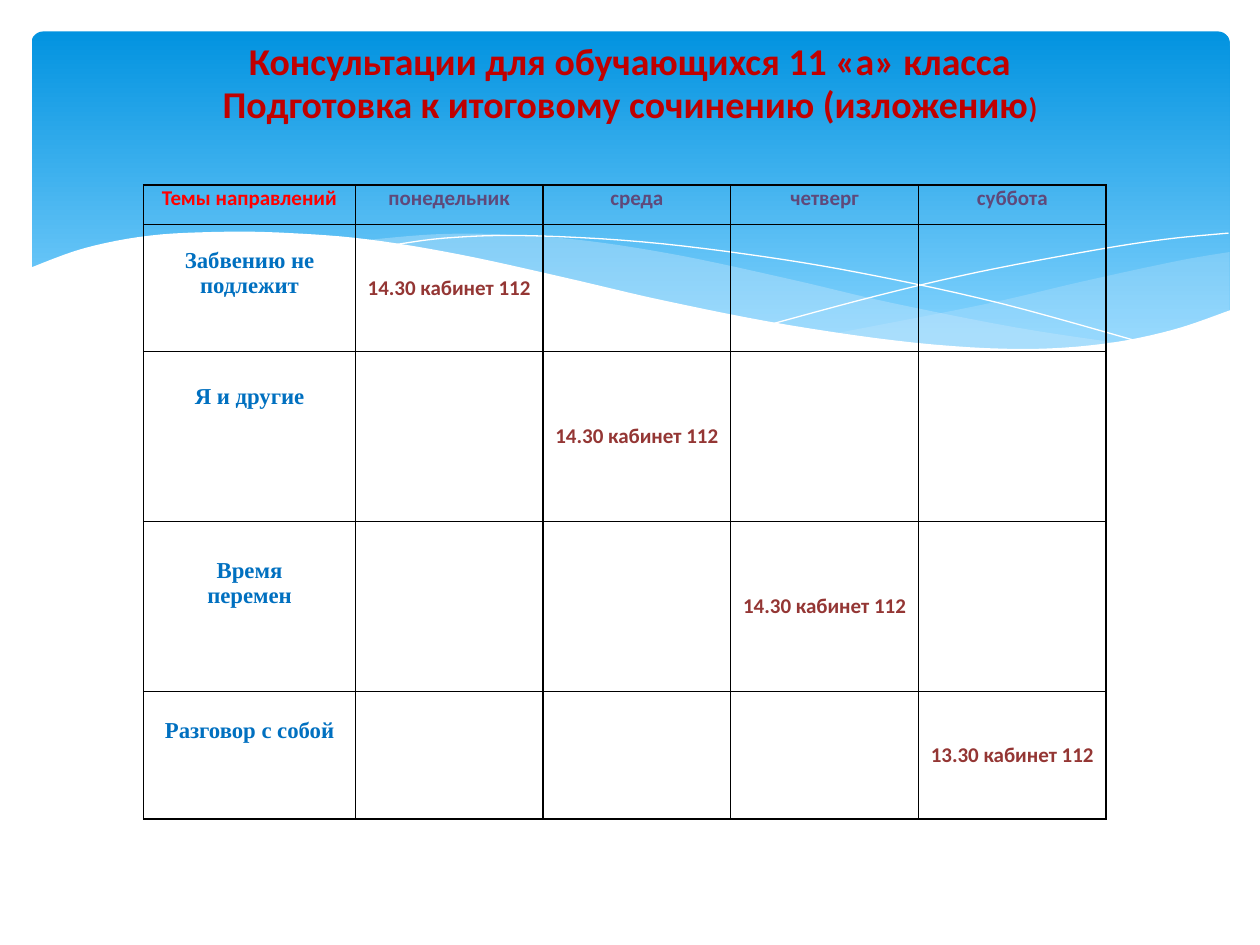
from lxml import etree
from pptx import Presentation
from pptx.dml.color import RGBColor
from pptx.enum import shapes, text
from pptx.oxml import ns
from pptx.util import Inches, Pt

COLORS = {
    "sky_top": "0293E0", "sky_bottom": "83D3FE", "mist": "C6E7FC",
    "white": "FFFFFF", "border": "000000", "title": "C00000",
    "corner": "FF0000", "day": "5F497A", "theme": "0070C0", "slot": "943634",
}

TITLE_FONT = {"name": "Calibri", "size": Pt(21.6), "bold": True}
CELL_FONT = {"name": "Calibri", "size": Pt(12), "bold": True}
THEME_FONT = {"name": "Times New Roman", "size": Pt(13), "bold": True}

DAYS = ["понедельник", "среда", "четверг", "суббота"]
CONSULTATIONS = [
    ("Забвению не подлежит", 0.19, "14.30 кабинет 112"),
    ("Я и другие", 0.26, "14.30 кабинет 112"),
    ("Время\nперемен", 0.29, "14.30 кабинет 112"),
    ("Разговор с собой", 0.21, "13.30 кабинет 112"),
]
COLUMN_WIDTHS = [1.68] + [1.49] * len(DAYS)
ROW_HEIGHTS = [0.31, 1.01, 1.35, 1.35, 1.01]

RIGHT_MIST = [
    [(9.76, 2), (9.35, 2.07), (8.61, 2.23), (7.79, 2.42), (6.61, 2.65)],
    [(6.61, 2.65), (7.05, 2.71), (7.57, 2.76), (8.14, 2.78), (8.63, 2.75),
     (9.13, 2.67), (9.49, 2.57), (9.76, 2.47)],
]
CENTRE_MIST = [
    [(8.93, 2.73), (8.07, 2.6), (7.06, 2.4), (6.29, 2.22), (5.41, 2.03),
     (4.65, 1.91), (3.99, 1.86), (3.44, 1.86), (2.86, 1.91)],
    [(2.86, 1.91), (3.62, 2.03), (4.49, 2.22), (5.66, 2.48), (6.5, 2.64),
     (7.22, 2.74), (7.85, 2.78), (8.38, 2.78), (8.93, 2.73)],
]
FALLING_LINE = [[(3.09, 1.95), (3.53, 1.89), (4.16, 1.87), (5.1, 1.92),
                 (6.08, 2.04), (6.95, 2.19), (7.95, 2.41), (9.07, 2.72)]]
RISING_LINE = [[(6.13, 2.57), (6.95, 2.35), (7.76, 2.16), (8.66, 1.99),
                (9.24, 1.9), (9.75, 1.85)]]
WHITE_WAVE = [
    [(9.77, 2.46), (9.3, 2.62), (8.75, 2.73), (8.09, 2.77), (7.26, 2.72),
     (6.26, 2.58), (5.29, 2.39), (4.47, 2.2), (3.65, 2.02), (2.92, 1.9),
     (2.3, 1.85), (1.77, 1.84), (1.19, 1.87), (0.67, 1.97), (0.23, 2.13)],
    [(0.23, 3.29), (9.77, 3.29)],
]


def rgb(color):
    return RGBColor.from_string(COLORS[color])


def apply_format(target, values):
    for attribute, value in values.items():
        setattr(target, attribute, value)


def style_font(font, values, color):
    apply_format(font, values)
    font.color.rgb = rgb(color)


def smooth(knots, steps=6):
    padded = [knots[0], *knots, knots[-1]]
    points = []
    for a, b, c, d in zip(padded, padded[1:], padded[2:], padded[3:]):
        for step in range(steps):
            t = step / steps
            points.append(tuple(
                (2 * q + (r - p) * t + (2 * p - 5 * q + 4 * r - s) * t ** 2
                 + (3 * q - p - 3 * r + s) * t ** 3) / 2
                for p, q, r, s in zip(a, b, c, d)))
    return points + [knots[-1]]


def add_outline(slide, curves, closed):
    points = [(Inches(x), Inches(y)) for curve in curves for x, y in smooth(curve)]
    builder = slide.shapes.build_freeform(*points[0])
    builder.add_line_segments(points[1:], close=closed)
    outline = builder.convert_to_shape()
    outline.shadow.inherit = False
    return outline


def add_wave(slide, curves, color, opacity=100):
    wave = add_outline(slide, curves, True)
    wave.fill.solid()
    wave.fill.fore_color.rgb = rgb(color)
    wave.line.fill.background()
    tint = wave.fill._xPr.find(".//" + ns.qn("a:srgbClr"))
    etree.SubElement(tint, ns.qn("a:alpha"), val=str(opacity * 1000))


def add_hairline(slide, curves):
    hairline = add_outline(slide, curves, False)
    hairline.fill.background()
    hairline.line.color.rgb = rgb("white")
    hairline.line.width = Pt(0)


def add_sky(slide):
    sky = slide.shapes.add_shape(
        shapes.MSO_SHAPE.ROUNDED_RECTANGLE,
        Inches(0.25), Inches(0.25), Inches(9.51), Inches(2.7))
    sky.adjustments[0] = 0.034
    sky.shadow.inherit = False
    sky.line.fill.background()
    sky.fill.gradient()
    sky.fill.gradient_angle = 270
    stops = [(0, "sky_top"), (0.9, "sky_bottom")]
    for stop, (position, color) in zip(sky.fill.gradient_stops, stops):
        stop.position = position
        stop.color.rgb = rgb(color)


def add_title(slide):
    title = slide.shapes.title
    apply_format(title, {"left": Inches(0.5), "top": Inches(0.37),
                         "width": Inches(9), "height": Inches(0.78)})
    frame = title.text_frame
    apply_format(frame, {
        "word_wrap": True, "auto_size": text.MSO_AUTO_SIZE.NONE,
        "vertical_anchor": text.MSO_ANCHOR.MIDDLE,
        "margin_top": 0, "margin_bottom": Inches(0.19)})
    heading = frame.paragraphs[0]
    apply_format(heading, {"alignment": text.PP_ALIGN.CENTER, "line_spacing": 0.96})
    for words, size in [("Консультации для обучающихся 11 «а» класса\v", 21.6),
                        ("Подготовка к итоговому сочинению (изложению", 21.6),
                        (")", 16.2)]:
        run = heading.add_run()
        run.text = words.rstrip("\v")
        style_font(run.font, {**TITLE_FONT, "size": Pt(size)}, "title")
        if words.endswith("\v"):
            heading.add_line_break()
    slide.shapes._spTree.append(title._element)


def border_cell(cell):
    properties = cell._tc.get_or_add_tcPr()
    for position, side in enumerate(("lnL", "lnR", "lnT", "lnB")):
        edge = etree.Element(ns.qn("a:" + side), w=str(Pt(1)))
        fill = etree.SubElement(edge, ns.qn("a:solidFill"))
        etree.SubElement(fill, ns.qn("a:srgbClr"), val=COLORS["border"])
        properties.insert(position, edge)


def fill_cell(cell, words, font, color, anchor, top=0):
    cell.text = words
    apply_format(cell, {"vertical_anchor": anchor, "margin_top": Inches(top)})
    for paragraph in cell.text_frame.paragraphs:
        paragraph.alignment = text.PP_ALIGN.CENTER
        for run in paragraph.runs:
            style_font(run.font, font, color)


def add_schedule(slide):
    schedule = slide.shapes.add_table(
        len(ROW_HEIGHTS), len(COLUMN_WIDTHS), Inches(1.14), Inches(1.47),
        Inches(sum(COLUMN_WIDTHS)), Inches(sum(ROW_HEIGHTS))).table
    apply_format(schedule, {"first_row": False, "horz_banding": False})
    for column, width in zip(schedule.columns, COLUMN_WIDTHS):
        column.width = Inches(width)
    for row, height in zip(schedule.rows, ROW_HEIGHTS):
        row.height = Inches(height)
    for cell in schedule.iter_cells():
        apply_format(cell, {"margin_left": Inches(0.04), "margin_right": Inches(0.04),
                            "margin_top": 0, "margin_bottom": 0})
        cell.fill.background()
        border_cell(cell)
    top, middle = text.MSO_ANCHOR.TOP, text.MSO_ANCHOR.MIDDLE
    fill_cell(schedule.cell(0, 0), "Темы направлений", CELL_FONT, "corner", top)
    for index, (day, (theme, offset, slot)) in enumerate(zip(DAYS, CONSULTATIONS), 1):
        fill_cell(schedule.cell(0, index), day, CELL_FONT, "day", top)
        fill_cell(schedule.cell(index, 0), theme, THEME_FONT, "theme", top, offset)
        fill_cell(schedule.cell(index, index), slot, CELL_FONT, "slot", middle)


def main():
    deck = Presentation()
    apply_format(deck, {"slide_width": Inches(10), "slide_height": Inches(7.5)})
    slide = deck.slides.add_slide(deck.slide_layouts[5])
    add_sky(slide)
    add_wave(slide, RIGHT_MIST, "mist", 29)
    add_wave(slide, CENTRE_MIST, "mist", 40)
    add_hairline(slide, FALLING_LINE)
    add_hairline(slide, RISING_LINE)
    add_wave(slide, WHITE_WAVE, "white")
    add_schedule(slide)
    add_title(slide)
    deck.save("out.pptx")


if __name__ == "__main__":
    main()
